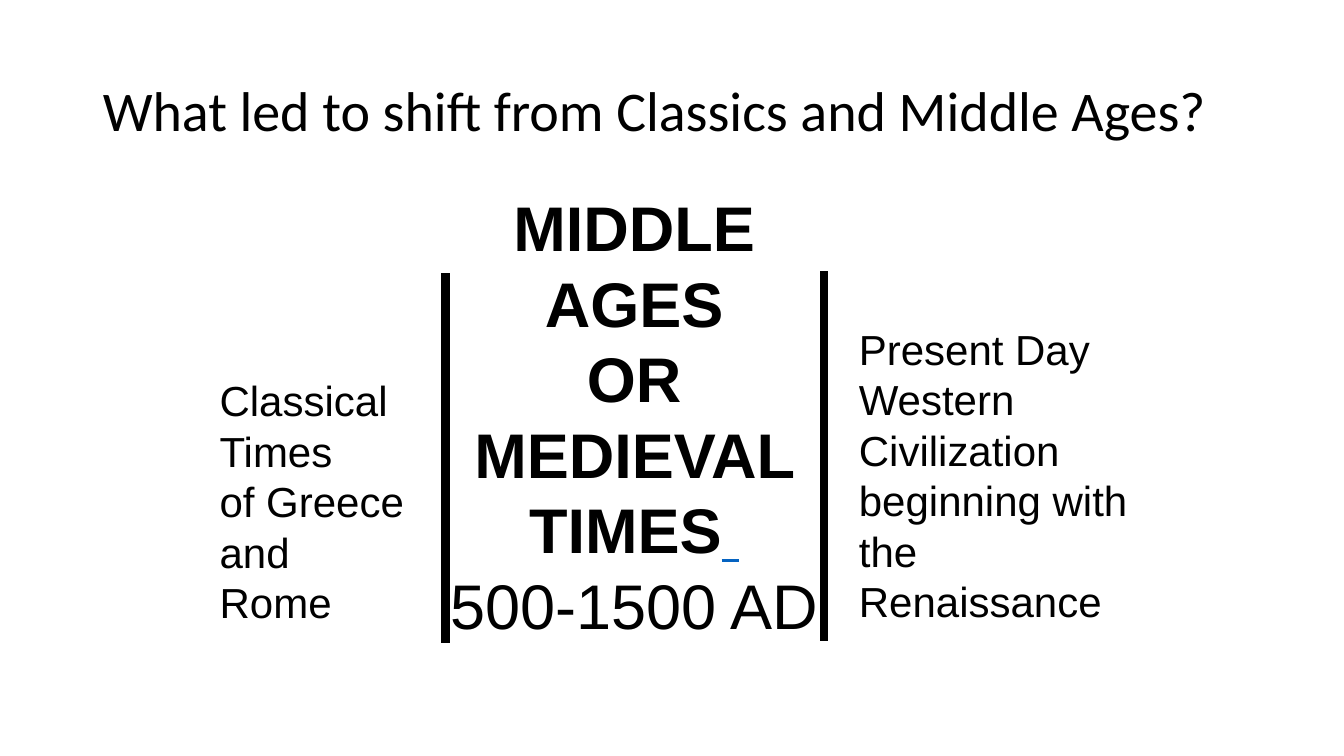
import pptx
import pptx.util
import pptx.dml.color
import pptx.enum.shapes
import pptx.enum.text
from lxml import etree

Inches, Pt = pptx.util.Inches, pptx.util.Pt
ALIGN = pptx.enum.text.PP_ALIGN
ANCHOR = pptx.enum.text.MSO_ANCHOR
BLACK = pptx.dml.color.RGBColor(0x00, 0x00, 0x00)
LINK_BLUE = pptx.dml.color.RGBColor(0x05, 0x63, 0xC1)

# Content
TITLE = "What led to shift from Classics and Middle Ages?"
# Each era: box (left, top, width, height), size, alignment, (text, bold) paragraphs
ERAS = {
    "classical": ((2.08, 3.67, 2.5, 2.6), 30, ALIGN.LEFT,
                  [("Classical Times", False), ("of Greece and", False), ("Rome", False)]),
    "medieval": ((4.33, 1.82, 3.92, 4.6), 45, ALIGN.CENTER,
                 [("MIDDLE AGES", True), ("OR MEDIEVAL TIMES", True), ("500-1500 AD", False)]),
    "present": ((8.42, 3.16, 3.08, 3.1), 30, ALIGN.LEFT,
                [("Present Day Western Civilization beginning with the Renaissance", False)]),
}
DIVIDERS = [(4.42, 2.71), (8.17, 2.69)]  # x, top
DIVIDER_HEIGHT = 3.67


def style(p, name, size, align, bold=False):
    p.alignment = align
    p.font.name, p.font.size, p.font.bold = name, Pt(size), bold
    p.font.color.rgb = BLACK


def add_era(s, box, size, align, lines):
    tf = s.shapes.add_textbox(*map(Inches, box)).text_frame
    tf.word_wrap = True
    for i, (text, bold) in enumerate(lines):
        p = tf.paragraphs[0] if i == 0 else tf.add_paragraph()
        p.add_run().text = text
        style(p, "Arial", size, align, bold)
    return tf


def add_divider(s, x, top):
    line = s.shapes.add_connector(
        pptx.enum.shapes.MSO_CONNECTOR.STRAIGHT,
        Inches(x), Inches(top), Inches(x), Inches(top + DIVIDER_HEIGHT))
    line.line.color.rgb = BLACK
    line.line.width = Pt(6)
    etree.SubElement(line._element.spPr, pptx.oxml.ns.qn("a:effectLst"))


def main():
    prs = pptx.Presentation()
    prs.slide_width, prs.slide_height = Inches(13.33), Inches(7.5)
    s = prs.slides.add_slide(prs.slide_layouts[5])

    # Title
    title = s.shapes.title
    title.left, title.top, title.width, title.height = map(Inches, (0.92, 0.4, 11.5, 1.45))
    tf = title.text_frame
    tf.text = TITLE
    tf.vertical_anchor = ANCHOR.MIDDLE
    style(tf.paragraphs[0], "Calibri", 40, ALIGN.LEFT)
    tf.paragraphs[0].line_spacing = 0.9

    # Eras
    frames = {name: add_era(s, *era) for name, era in ERAS.items()}

    # Underlined link space after the medieval heading
    r = frames["medieval"].paragraphs[1].add_run()
    r.text = " "
    r.font.bold, r.font.underline = False, True
    r.font.color.rgb = LINK_BLUE

    # Dividers between eras
    for x, top in DIVIDERS:
        add_divider(s, x, top)

    prs.save("out.pptx")


if __name__ == "__main__":
    main()
